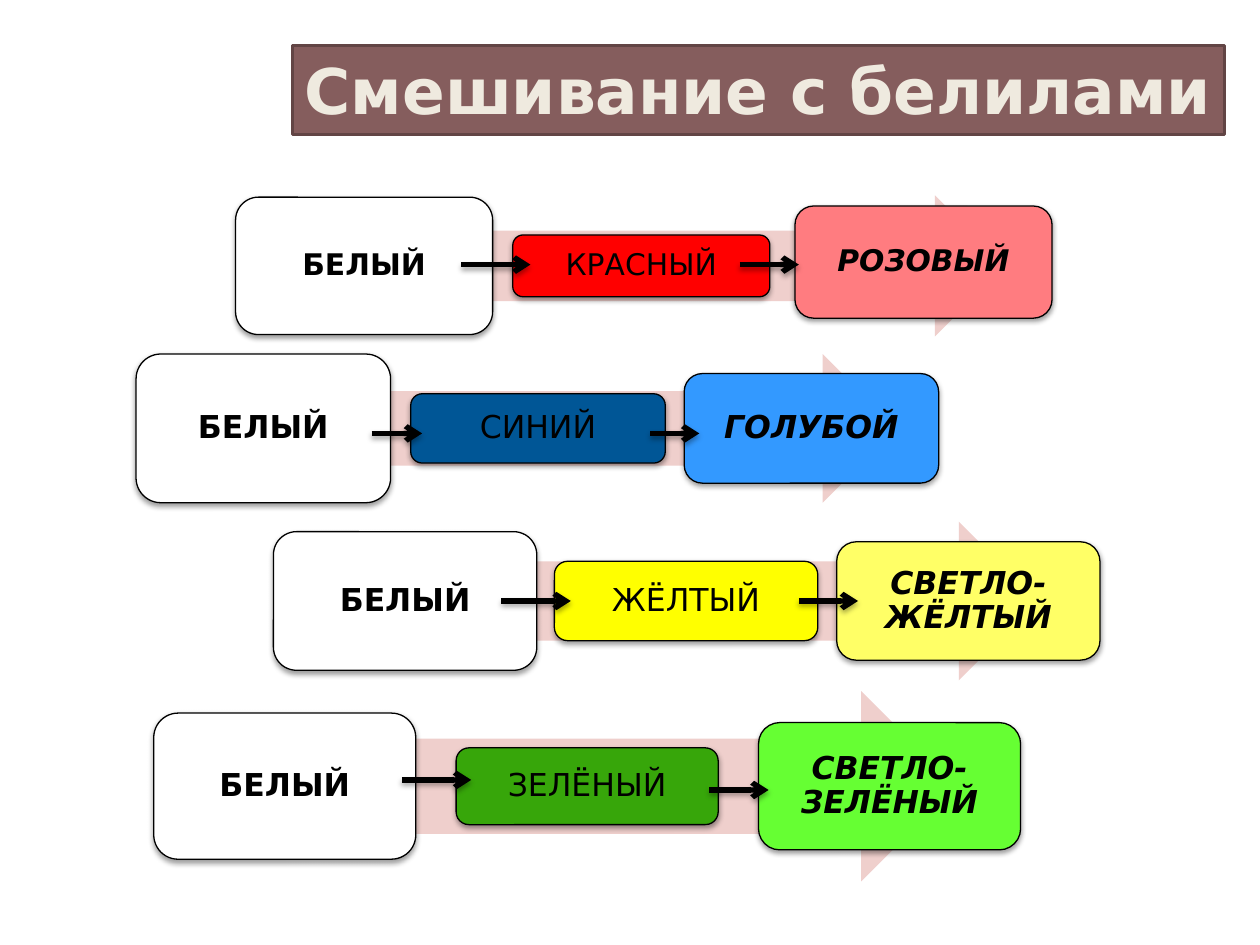
"""Build a slide showing how colours lighten when mixed with white."""
from lxml.etree import SubElement
from pptx import Presentation
from pptx.dml.color import RGBColor
from pptx.enum.shapes import MSO_CONNECTOR as Connector, MSO_SHAPE as Shape
from pptx.enum.text import MSO_ANCHOR as Anchor, MSO_AUTO_SIZE as AutoSize, PP_ALIGN as Align
from pptx.oxml.ns import qn
from pptx.util import Inches, Pt

FONT = "DejaVu Sans"
COLORS = {
    "title_fill": "855D5D", "title_line": "624545", "title_text": "EFEADF",
    "band": "EFCFCC", "black": "000000", "white": "FFFFFF",
    "red": "FF0000", "pink": "FF7C80", "blue": "005696", "light_blue": "3399FF",
    "yellow": "FFFF00", "light_yellow": "FFFF66", "green": "37A60A", "light_green": "66FF33",
}
TITLE = "Смешивание с белилами"
STYLES = [{"bold": True}, {}, {"bold": True, "italic": True}]
ROWS = [
    {"middle": 2.11, "size": 17, "band": (2.2, 5.78, 1.12), "box_width": 2.04,
     "boxes": [("БЕЛЫЙ", "white", 1.87, 1.09, 0), ("КРАСНЫЙ", "red", 4.07, 0.49, 0),
               ("РОЗОВЫЙ", "pink", 6.31, 0.89, -0.03)],
     "arrows": [(3.66, 4.21, 2.1), (5.87, 6.34, 2.1)]},
    {"middle": 3.4, "size": 18, "band": (1.41, 5.71, 1.18), "box_width": 2.02,
     "boxes": [("БЕЛЫЙ", "white", 1.08, 1.18, 0), ("СИНИЙ", "blue", 3.26, 0.55, 0),
               ("ГОЛУБОЙ", "light_blue", 5.43, 0.87, 0)],
     "arrows": [(2.95, 3.35, 3.44), (5.16, 5.55, 3.44)]},
    {"middle": 4.77, "size": 18, "band": (2.66, 5.58, 1.26), "box_width": 2.09,
     "boxes": [("БЕЛЫЙ", "white", 2.17, 1.1, 0), ("ЖЁЛТЫЙ", "yellow", 4.4, 0.63, 0),
               ("СВЕТЛО-ЖЁЛТЫЙ", "light_yellow", 6.64, 0.94, 0)],
     "arrows": [(3.98, 4.53, 4.77), (6.34, 6.81, 4.77)]},
    {"middle": 6.24, "size": 18, "band": (1.74, 5.85, 1.51), "box_width": 2.08,
     "boxes": [("БЕЛЫЙ", "white", 1.22, 1.16, 0), ("ЗЕЛЁНЫЙ", "green", 3.62, 0.61, 0),
               ("СВЕТЛО- ЗЕЛЁНЫЙ", "light_green", 6.02, 1.01, 0)],
     "arrows": [(3.19, 3.74, 6.19), (5.63, 6.1, 6.27)]},
]


def rgb(name):
    return RGBColor.from_string(COLORS[name])


def set_all(target, values):
    for name, value in values.items():
        setattr(target, name, value)


def add_shadow(effects, distance, opacity):
    shadow = SubElement(effects, qn("a:outerShdw"), blurRad=str(Pt(3.1)), dist=str(Pt(distance)),
                        dir="5400000", rotWithShape="0")
    color = SubElement(shadow, qn("a:srgbClr"), val=COLORS["black"])
    SubElement(color, qn("a:alpha"), val=str(opacity * 1000))


def add_block(slide, kind, left, top, width, height, fill, line=None, line_width=0.75):
    shape = slide.shapes.add_shape(kind, *map(Inches, (left, top, width, height)))
    shape.shadow.inherit = False
    shape.fill.solid()
    shape.fill.fore_color.rgb = rgb(fill)
    if line:
        shape.line.color.rgb = rgb(line)
        shape.line.width = Pt(line_width)
    else:
        shape.line.fill.background()
    return shape


def write(shape, text, size, color, frame_format, paragraph_format, font_format):
    frame = shape.text_frame
    set_all(frame, {"word_wrap": True, **frame_format})
    paragraph = frame.paragraphs[0]
    set_all(paragraph, paragraph_format)
    run = paragraph.add_run()
    run.text = text
    set_all(run.font, {"name": FONT, "size": Pt(size), **font_format})
    run.font.color.rgb = rgb(color)


def add_arrow(slide, start, end, y):
    arrow = slide.shapes.add_connector(Connector.STRAIGHT, *map(Inches, (start, y, end, y)))
    arrow.line.color.rgb = rgb("black")
    arrow.line.width = Pt(3)
    properties = arrow._element.spPr
    SubElement(properties.find(qn("a:ln")), qn("a:tailEnd"), type="arrow")
    add_shadow(SubElement(properties, qn("a:effectLst")), 1.8, 35)


def add_row(slide, row):
    left, width, height = row["band"]
    add_block(slide, Shape.RIGHT_ARROW, left, row["middle"] - height / 2, width, height, "band")
    margins = {f"margin_{side}": Inches(0.07) for side in ("left", "top", "right", "bottom")}
    for (text, fill, left, height, shift), style in zip(row["boxes"], STYLES):
        top = row["middle"] + shift - height / 2
        box = add_block(slide, Shape.ROUNDED_RECTANGLE, left, top, row["box_width"], height,
                        fill, "black")
        add_shadow(box._element.spPr.find(qn("a:effectLst")), 1.6, 38)
        write(box, text, row["size"], "black", {"vertical_anchor": Anchor.MIDDLE, **margins},
              {"alignment": Align.CENTER, "line_spacing": 0.9}, style)
    for arrow in row["arrows"]:
        add_arrow(slide, *arrow)


def main():
    presentation = Presentation()
    set_all(presentation, {"slide_width": Inches(10), "slide_height": Inches(7.5)})
    slide = presentation.slides.add_slide(presentation.slide_layouts[6])
    title = add_block(slide, Shape.RECTANGLE, 2.32, 0.36, 7.4, 0.71, "title_fill", "title_line", 2)
    write(title, TITLE, 36, "title_text",
          {"vertical_anchor": Anchor.TOP, "auto_size": AutoSize.SHAPE_TO_FIT_TEXT},
          {"alignment": Align.LEFT}, {"bold": True})
    for row in ROWS:
        add_row(slide, row)
    presentation.save("out.pptx")


if __name__ == "__main__":
    main()
